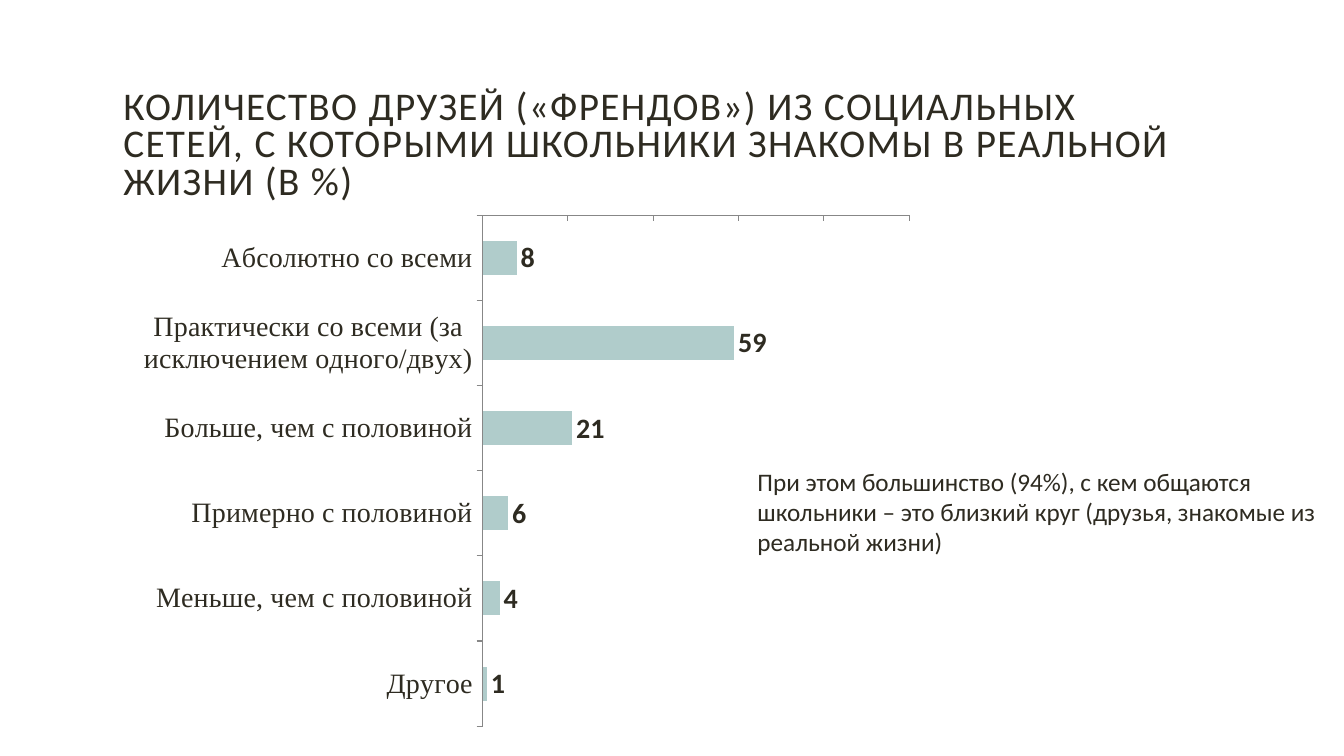
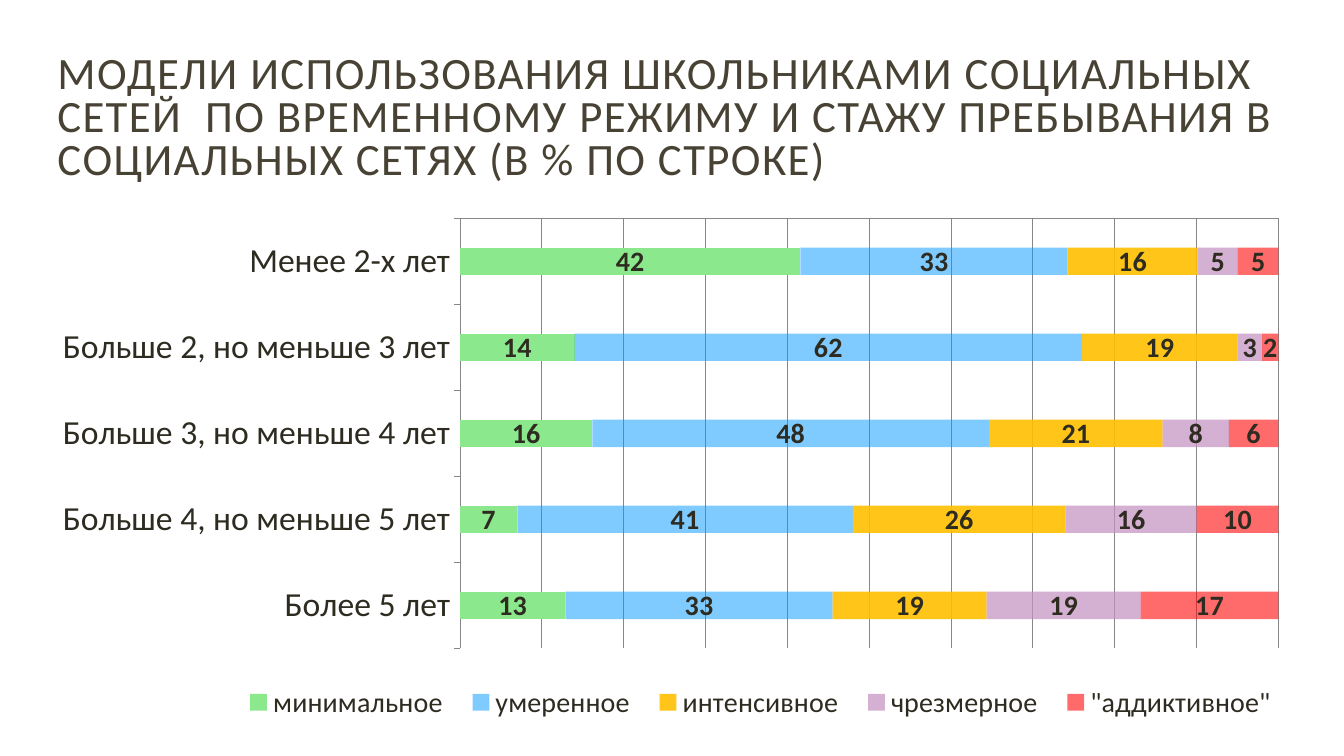
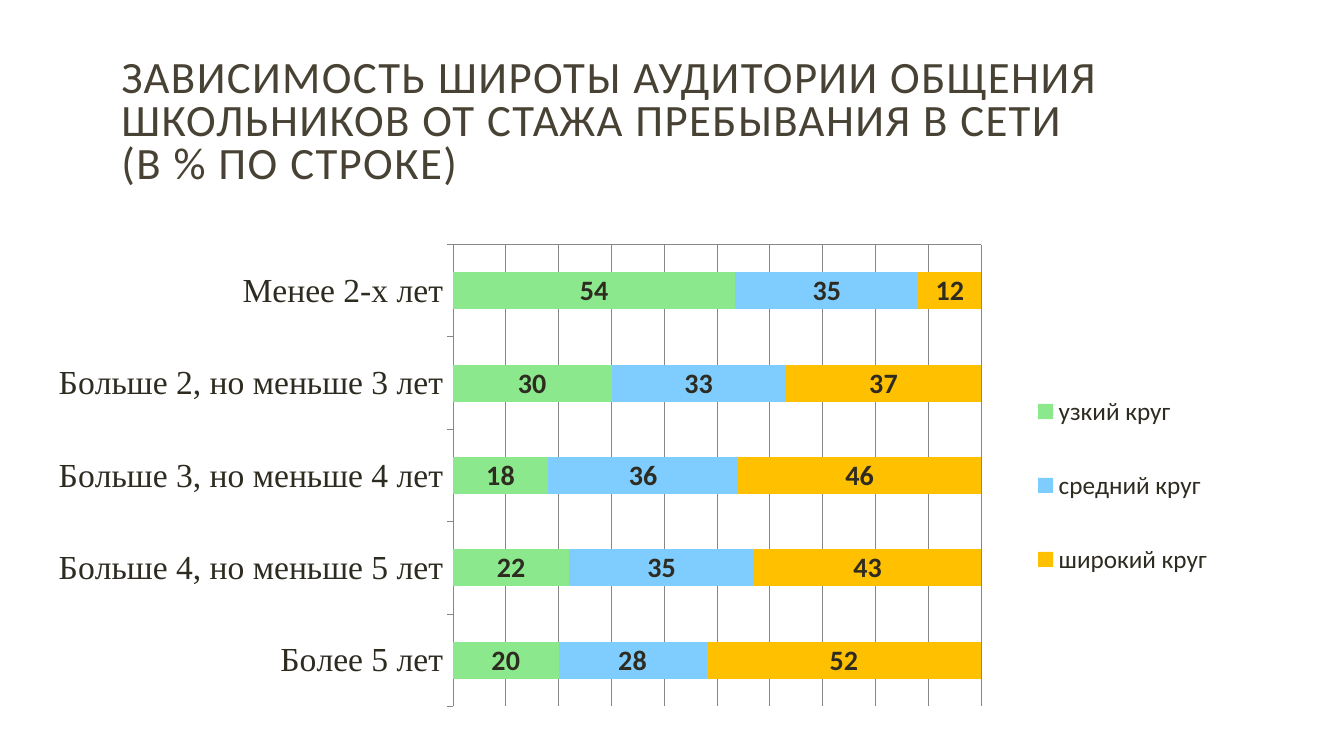
from dataclasses import dataclass

from lxml import etree
from pptx import Presentation
from pptx.chart.data import CategoryChartData
from pptx.dml.color import RGBColor
from pptx.enum.chart import (
    XL_CHART_TYPE,
    XL_LABEL_POSITION,
    XL_LEGEND_POSITION,
    XL_TICK_LABEL_POSITION,
    XL_TICK_MARK,
)
from pptx.enum.text import MSO_ANCHOR, MSO_AUTO_SIZE, PP_ALIGN
from pptx.oxml.ns import qn
from pptx.util import Emu, Pt

CLUSTERED = XL_CHART_TYPE.BAR_CLUSTERED
STACKED_100 = XL_CHART_TYPE.BAR_STACKED_100
OUTSIDE_END = XL_LABEL_POSITION.OUTSIDE_END
LEGEND_RIGHT = XL_LEGEND_POSITION.RIGHT
NO_LABELS = XL_TICK_LABEL_POSITION.NONE
TICK_IN, TICK_OUT = XL_TICK_MARK.INSIDE, XL_TICK_MARK.OUTSIDE
TICK_NONE = XL_TICK_MARK.NONE
LEFT = PP_ALIGN.LEFT
MIDDLE = MSO_ANCHOR.MIDDLE
NO_AUTOFIT = MSO_AUTO_SIZE.NONE

EMU_PER_PX = 9525
TITLE_ONLY = 5
SANS, SERIF = "Calibri", "Times New Roman"

INK = RGBColor(0x2E, 0x2B, 0x21)
OLIVE = RGBColor(0x47, 0x42, 0x33)
AXIS_GRAY = RGBColor(0x87, 0x87, 0x87)
TEAL = RGBColor(0xB0, 0xCC, 0xCB)
GREEN = RGBColor(0x8C, 0xE8, 0x8C)
BLUE = RGBColor(0x00, 0x99, 0xFF)
SKY = RGBColor(0x7F, 0xCC, 0xFF)
AMBER = RGBColor(0xFF, 0xC0, 0x00)
MAUVE = RGBColor(0xC4, 0x92, 0xC2)
RED = RGBColor(0xFF, 0x00, 0x00)

EXPERIENCE = (
    "Менее 2-х лет",
    "Больше 2, но меньше 3 лет",
    "Больше 3, но меньше 4 лет",
    "Больше 4, но меньше 5 лет",
    "Более 5 лет",
)


@dataclass(frozen=True)
class Box:
    x: int
    y: int
    w: int
    h: int

    def emu(self) -> tuple[Emu, ...]:
        return tuple(Emu(v * EMU_PER_PX) for v in (self.x, self.y, self.w, self.h))


@dataclass(frozen=True)
class Layout:
    x: float
    y: float
    w: float
    h: float


@dataclass(frozen=True)
class Legend:
    layout: Layout
    size: int


@dataclass(frozen=True)
class Series:
    name: str
    values: tuple[int, ...]
    color: RGBColor
    opacity: int = 100


@dataclass(frozen=True)
class BarChart:
    box: Box
    plot: Layout
    categories: tuple[str, ...]
    series: tuple[Series, ...]
    category_size: int
    category_font: str
    gap: int = 150
    overlap: int = 100
    legend: Legend | None = None


@dataclass(frozen=True)
class Note:
    text: str
    box: Box


@dataclass(frozen=True)
class ChartSlide:
    title: str
    title_box: Box
    chart: BarChart
    title_size: int = 32
    title_color: RGBColor = OLIVE
    note: Note | None = None


SLIDES = (
    ChartSlide(
        title="КОЛИЧЕСТВО ДРУЗЕЙ («ФРЕНДОВ») ИЗ СОЦИАЛЬНЫХ СЕТЕЙ, "
        "С КОТОРЫМИ ШКОЛЬНИКИ ЗНАКОМЫ В РЕАЛЬНОЙ ЖИЗНИ (В %)",
        title_box=Box(108, 61, 1020, 157),
        title_size=28,
        title_color=INK,
        chart=BarChart(
            box=Box(45, 183, 864, 547),
            plot=Layout(0.48, 0.04, 0.47, 0.89),
            categories=(
                "Абсолютно со всеми",
                "Практически со всеми (за исключением одного/двух)",
                "Больше, чем с половиной",
                "Примерно с половиной",
                "Меньше, чем с половиной",
                "Другое",
            ),
            series=(Series("Series 1", (8, 59, 21, 6, 4, 1), TEAL),),
            category_size=20,
            category_font=SERIF,
        ),
        note=Note(
            "При этом большинство (94%), с кем общаются школьники – "
            "это близкий круг (друзья, знакомые из реальной жизни)",
            Box(712, 439, 568, 97),
        ),
    ),
    ChartSlide(
        title="МОДЕЛИ ИСПОЛЬЗОВАНИЯ ШКОЛЬНИКАМИ СОЦИАЛЬНЫХ СЕТЕЙ  ПО ВРЕМЕННОМУ "
        "РЕЖИМУ И СТАЖУ ПРЕБЫВАНИЯ В СОЦИАЛЬНЫХ СЕТЯХ (В % ПО СТРОКЕ)",
        title_box=Box(45, 35, 1197, 157),
        chart=BarChart(
            box=Box(24, 181, 1218, 539),
            plot=Layout(0.34, 0.05, 0.64, 0.76),
            categories=EXPERIENCE,
            series=(
                Series("минимальное", (42, 14, 16, 7, 13), GREEN),
                Series("умеренное", (33, 62, 48, 41, 33), BLUE, 50),
                Series("интенсивное", (16, 19, 21, 26, 19), AMBER, 90),
                Series("чрезмерное", (5, 3, 8, 16, 19), MAUVE, 72),
                Series('"аддиктивное"', (5, 2, 6, 10, 17), RED, 58),
            ),
            category_size=24,
            category_font=SANS,
            gap=215,
            overlap=99,
            legend=Legend(Layout(0.16, 0.87, 0.83, 0.07), 20),
        ),
    ),
    ChartSlide(
        title="ЗАВИСИМОСТЬ ШИРОТЫ АУДИТОРИИ ОБЩЕНИЯ ШКОЛЬНИКОВ "
        "ОТ СТАЖА ПРЕБЫВАНИЯ В СЕТИ \v(В % ПО СТРОКЕ)",
        title_box=Box(106, 39, 1054, 157),
        chart=BarChart(
            box=Box(22, 219, 1170, 468),
            plot=Layout(0.35, 0.03, 0.43, 0.94),
            categories=EXPERIENCE,
            series=(
                Series("узкий круг", (54, 30, 18, 22, 20), GREEN),
                Series("средний круг", (35, 33, 36, 35, 28), SKY),
                Series("широкий круг", (12, 37, 46, 43, 52), AMBER),
            ),
            category_size=24,
            category_font=SERIF,
            legend=Legend(Layout(0.81, 0.25, 0.17, 0.54), 18),
        ),
    ),
)


def set_font(font, size: int, color: RGBColor = INK, name: str = SANS, bold: bool = False) -> None:
    font.size = Pt(size)
    font.name = name
    font.bold = bold
    font.color.rgb = color


def set_layout(parent, index: int, layout: Layout, inner: bool = False) -> None:
    for old in parent.findall(qn("c:layout")):
        parent.remove(old)
    node = etree.Element(qn("c:layout"))
    manual = etree.SubElement(node, qn("c:manualLayout"))
    settings = [("layoutTarget", "inner")] if inner else []
    settings += [("xMode", "edge"), ("yMode", "edge")]
    settings += [(key, str(getattr(layout, key))) for key in "xywh"]
    for tag, value in settings:
        etree.SubElement(manual, qn(f"c:{tag}")).set("val", value)
    parent.insert(index, node)


def set_axis_line(line) -> None:
    line.color.rgb = AXIS_GRAY
    line.width = Pt(0.75)


def format_axes(chart, spec: BarChart, stacked: bool) -> None:
    cat, val = chart.category_axis, chart.value_axis
    cat.reverse_order = True
    cat.has_major_gridlines = False
    cat.major_tick_mark = TICK_OUT
    set_font(cat.tick_labels.font, spec.category_size, name=spec.category_font)
    val.tick_label_position = NO_LABELS
    val.major_tick_mark = TICK_IN
    val.has_major_gridlines = stacked
    for axis in (cat, val):
        axis.minor_tick_mark = TICK_NONE
        set_axis_line(axis.format.line)
    if stacked:
        set_axis_line(val.major_gridlines.format.line)
    else:
        val.minimum_scale, val.maximum_scale, val.major_unit = 0, 100, 20


def format_series(ser, spec: Series, stacked: bool) -> None:
    fill = ser.format.fill
    fill.solid()
    fill.fore_color.rgb = spec.color
    if spec.opacity < 100:
        color = ser._element.find(f".//{qn('a:srgbClr')}")
        etree.SubElement(color, qn("a:alpha")).set("val", str(spec.opacity * 1000))
    labels = ser.data_labels
    labels.show_value = True
    labels.number_format = "0"
    labels.number_format_is_linked = False
    set_font(labels.font, 20, bold=True)
    if not stacked:
        labels.position = OUTSIDE_END


def add_bar_chart(s, spec: BarChart) -> None:
    stacked = len(spec.series) > 1
    data = CategoryChartData()
    data.categories = spec.categories
    for item in spec.series:
        data.add_series(item.name, item.values)
    kind = STACKED_100 if stacked else CLUSTERED
    chart = s.shapes.add_chart(kind, *spec.box.emu(), data).chart
    set_font(chart.font, 10)
    chart.has_title = False
    plot = chart.plots[0]
    plot.vary_by_categories = False
    plot.gap_width = spec.gap
    if stacked:
        plot.overlap = spec.overlap
    format_axes(chart, spec, stacked)
    for ser, item in zip(plot.series, spec.series):
        format_series(ser, item, stacked)
    set_layout(chart._chartSpace.chart.plotArea, 0, spec.plot, inner=True)
    chart.has_legend = spec.legend is not None
    if spec.legend:
        legend = chart.legend
        legend.position = LEGEND_RIGHT
        legend.include_in_layout = False
        set_font(legend.font, spec.legend.size)
        set_layout(legend._element, 1, spec.legend.layout)


def set_title(s, spec: ChartSlide) -> None:
    sp = s.shapes.title
    sp.left, sp.top, sp.width, sp.height = spec.title_box.emu()
    tf = sp.text_frame
    tf.word_wrap = True
    tf.auto_size = NO_AUTOFIT
    tf.vertical_anchor = MIDDLE
    p = tf.paragraphs[0]
    p.text = spec.title
    p.alignment = LEFT
    p.line_spacing = 0.8
    set_font(p.font, spec.title_size, spec.title_color)
    p._p.get_or_add_pPr().get_or_add_defRPr().set("spc", "100")


def add_note(s, note: Note) -> None:
    tf = s.shapes.add_textbox(*note.box.emu()).text_frame
    tf.word_wrap = True
    p = tf.paragraphs[0]
    p.text = note.text
    set_font(p.font, 18)


def main() -> None:
    prs = Presentation()
    prs.slide_width, prs.slide_height = Emu(1280 * EMU_PER_PX), Emu(720 * EMU_PER_PX)
    for spec in SLIDES:
        s = prs.slides.add_slide(prs.slide_layouts[TITLE_ONLY])
        set_title(s, spec)
        add_bar_chart(s, spec.chart)
        if spec.note:
            add_note(s, spec.note)
    prs.save("out.pptx")


if __name__ == "__main__":
    main()
